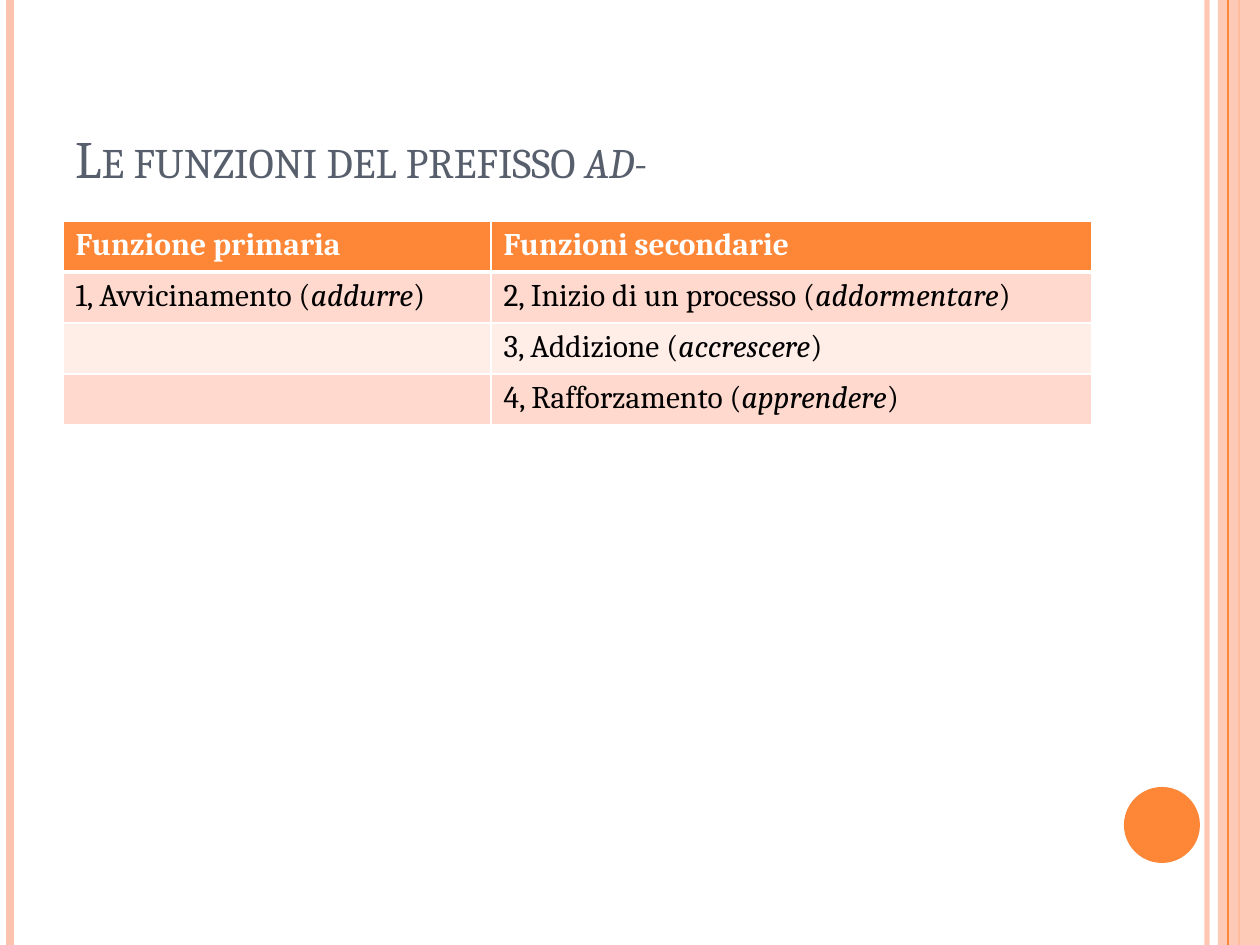
from lxml import etree
from pptx import Presentation
from pptx import util as u
from pptx.dml.color import RGBColor
from pptx.enum import shapes, text
from pptx.oxml.ns import qn

SCALE = 914400 / 126
WIDTH, HEIGHT = 1260, 945
FONT = "Cambria"
ORANGE, PEACH, SLATE = "FE8637", "FEC3AE", "575F6D"
WHITE, BLACK = "FFFFFF", "000000"
BANDS = ["FFD9CE", "FFEDE8"]

# x, colour, width in points, opacity in percent
RULES = [(1207, PEACH, 3, 93), (10, PEACH, 4.5, 100), (1239, ORANGE, 1.5, 100)]
INNER_RULE = (1228, ORANGE, 0.75, 100)

HEADERS = ["Funzione primaria", "Funzioni secondarie"]
# Each filled cell: function, example in italics
FUNCTIONS = [
    [("1, Avvicinamento", "addurre"), ("2, Inizio di un processo", "addormentare")],
    [None, ("3, Addizione", "accrescere")],
    [None, ("4, Rafforzamento", "apprendere")],
]


def px(value):
    return u.Emu(round(value * SCALE))


def rgb(value):
    return RGBColor.from_string(value)


def set_opacity(element, percent):
    color = element.find(".//" + qn("a:srgbClr"))
    etree.SubElement(color, qn("a:alpha"), val=str(percent * 1000))


def add_rule(slide, x, color, width, opacity):
    rule = slide.shapes.add_connector(
        shapes.MSO_CONNECTOR.STRAIGHT, px(x), 0, px(x), px(HEIGHT))
    rule.line.color.rgb = rgb(color)
    rule.line.width = u.Pt(width)
    properties = rule._element.spPr
    if opacity < 100:
        set_opacity(properties, opacity)
    etree.SubElement(properties, qn("a:effectLst"))


def add_block(slide, kind, box, color, opacity=100):
    shape = slide.shapes.add_shape(kind, *map(px, box))
    shape.shadow.inherit = False
    shape.fill.solid()
    shape.fill.fore_color.rgb = rgb(color)
    shape.line.fill.background()
    if opacity < 100:
        set_opacity(shape._element.spPr, opacity)


def add_run(paragraph, content, size, color, **styles):
    run = paragraph.add_run()
    run.text = content
    run.font.color.rgb = rgb(color)
    for name, value in {"name": FONT, "size": u.Pt(size), **styles}.items():
        setattr(run.font, name, value)
    return run


def add_title(slide):
    box = slide.shapes.add_textbox(*map(px, (63, 38, 1029, 157)))
    frame = box.text_frame
    frame.word_wrap = True
    frame.vertical_anchor = text.MSO_ANCHOR.BOTTOM
    for content, italic in [("Le funzioni del prefisso ", False), ("ad-", True)]:
        run = add_run(frame.paragraphs[0], content, 30, SLATE, italic=italic)
        run._r.get_or_add_rPr().set("cap", "small")


def style_cell(cell, fill, top=1, bottom=1):
    properties = cell._tc.get_or_add_tcPr()
    for side, width in {"L": 1, "R": 1, "T": top, "B": bottom}.items():
        line = etree.SubElement(properties, qn("a:ln" + side), w=str(u.Pt(width)))
        solid = etree.SubElement(line, qn("a:solidFill"))
        etree.SubElement(solid, qn("a:srgbClr"), val=WHITE)
    cell.fill.solid()
    cell.fill.fore_color.rgb = rgb(fill)


def add_functions_table(slide):
    row_count = len(FUNCTIONS) + 1
    table = slide.shapes.add_table(
        row_count, len(HEADERS), *map(px, (63, 221, 1029, 51 * row_count))).table
    for column, width in zip(table.columns, (428, 601)):
        column.width = px(width)

    # Header row
    for index, header in enumerate(HEADERS):
        cell = table.cell(0, index)
        style_cell(cell, ORANGE, bottom=3)
        add_run(cell.text_frame.paragraphs[0], header, 18, WHITE, bold=True)

    # Banded body rows
    for row, entries in enumerate(FUNCTIONS, start=1):
        for index, entry in enumerate(entries):
            cell = table.cell(row, index)
            style_cell(cell, BANDS[(row - 1) % 2], top=3 if row == 1 else 1)
            if entry:
                label, example = entry
                paragraph = cell.text_frame.paragraphs[0]
                add_run(paragraph, label + " (", 18, BLACK, bold=False)
                add_run(paragraph, example, 18, BLACK, bold=False, italic=True)
                add_run(paragraph, ")", 18, BLACK, bold=False)


def main():
    presentation = Presentation()
    presentation.slide_width, presentation.slide_height = px(WIDTH), px(HEIGHT)
    slide = presentation.slides.add_slide(presentation.slide_layouts[6])

    # Side decoration
    for rule in RULES:
        add_rule(slide, *rule)
    add_block(slide, shapes.MSO_SHAPE.RECTANGLE, (1218, 0, 42, HEIGHT), PEACH, 87)
    add_rule(slide, *INNER_RULE)
    add_block(slide, shapes.MSO_SHAPE.OVAL, (1124, 787, 76, 76), ORANGE)

    # Content
    add_title(slide)
    add_functions_table(slide)
    presentation.save("out.pptx")


if __name__ == "__main__":
    main()
